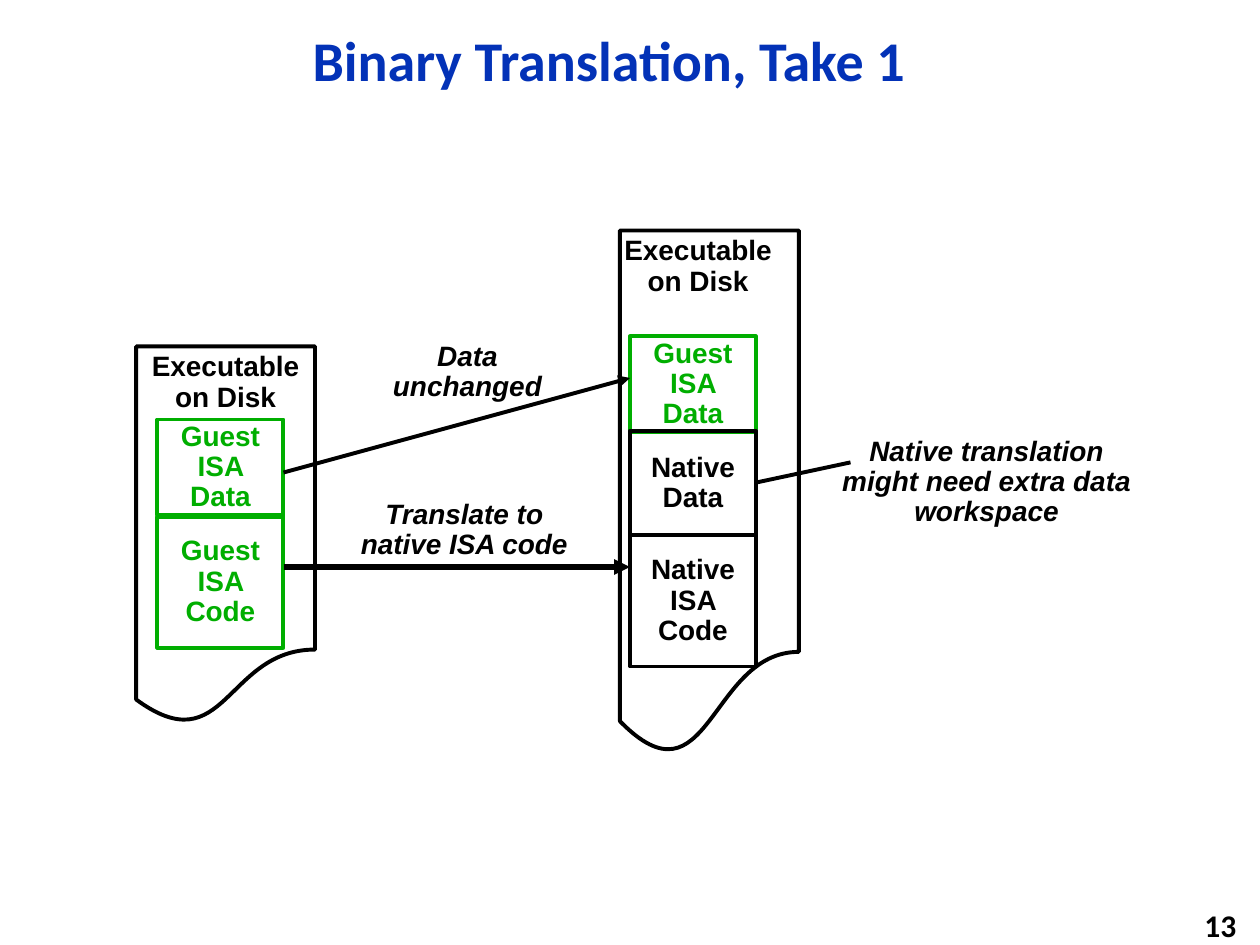
"""Build the slide 'Binary Translation, Take 1'."""
from lxml.etree import SubElement
from pptx import Presentation
from pptx.dml.color import RGBColor
from pptx.enum.shapes import MSO_CONNECTOR, MSO_SHAPE
from pptx.enum.text import MSO_ANCHOR, PP_ALIGN
from pptx.oxml.ns import qn
from pptx.util import Inches, Pt

BLUE = RGBColor(0x03, 0x32, 0xB7)
GREEN = RGBColor(0x00, 0xAE, 0x00)
BLACK = RGBColor(0x00, 0x00, 0x00)

DOCUMENTS = [(1.08, 2.75, 1.42, 3), (4.92, 1.83, 1.42, 4.17)]
SECTIONS = [
    ("Guest ISA Data", 1.25, 3.33, 0.76, GREEN),
    ("Guest ISA Code", 1.25, 4.1, 1.04, GREEN),
    ("Guest ISA Data", 5, 2.67, 0.76, GREEN),
    ("Native Data", 5, 3.42, 0.83, BLACK),
    ("Native ISA Code", 5, 4.25, 1.04, BLACK),
]
HEADINGS = [
    ("Executable on Disk", (1.08, 2.75, 1.42, 0.58)),
    ("Executable on Disk", (4.83, 1.83, 1.42, 0.58)),
]
NOTES = [
    ("Data unchanged", (2.92, 2.67, 1.58, 0.58)),
    ("Translate to native ISA code", (2.67, 3.92, 2.03, 0.58)),
    ("Native translation might need extra data workspace", (6.58, 3.42, 2.5, 0.82)),
]
LINES = [
    ((2.25, 3.75, 5, 3), 2.25, True),
    ((2.25, 4.5, 5, 4.5), 3, True),
    ((6, 3.83, 6.75, 3.67), 2.25, False),
]


def write(sp, text, size=16, font="Arial", color=BLACK, italic=False,
          align=PP_ALIGN.CENTER, anchor=MSO_ANCHOR.TOP, spacing=0.9):
    tf = sp.text_frame
    tf.word_wrap = True
    tf.vertical_anchor = anchor
    p = tf.paragraphs[0]
    p.alignment = align
    p.line_spacing = spacing
    r = p.add_run()
    r.text = text
    r.font.size = Pt(size)
    r.font.name = font
    r.font.bold = True
    r.font.italic = italic
    r.font.color.rgb = color


def add_text(s, text, box, **fmt):
    write(s.shapes.add_textbox(*map(Inches, box)), text, **fmt)


def add_outline(s, kind, box, color):
    sp = s.shapes.add_shape(kind, *map(Inches, box))
    sp.shadow.inherit = False
    sp.fill.background()
    sp.line.color.rgb = color
    sp.line.width = Pt(2.25)
    return sp


def add_line(s, ends, width, arrow):
    cn = s.shapes.add_connector(MSO_CONNECTOR.STRAIGHT, *map(Inches, ends))
    cn.line.color.rgb = BLACK
    cn.line.width = Pt(width)
    if arrow:
        SubElement(cn.line._get_or_add_ln(), qn("a:tailEnd"), type="triangle")
    SubElement(cn._element.spPr, qn("a:effectLst"))


def main():
    prs = Presentation()
    prs.slide_width, prs.slide_height = Inches(10), Inches(7.5)
    s = prs.slides.add_slide(prs.slide_layouts[6])

    add_text(s, "Binary Translation, Take 1", (0.92, 0, 7.83, 1), size=32,
             font="Calibri", color=BLUE, anchor=MSO_ANCHOR.MIDDLE)
    add_text(s, "13", (7.83, 7.18, 2.08, 0.32), size=18, font="Calibri",
             align=PP_ALIGN.RIGHT, anchor=MSO_ANCHOR.MIDDLE, spacing=1.0)

    for box in DOCUMENTS:
        add_outline(s, MSO_SHAPE.FLOWCHART_DOCUMENT, box, BLACK)
    for text, x, y, h, color in SECTIONS:
        sp = add_outline(s, MSO_SHAPE.RECTANGLE, (x, y, 1, h), color)
        write(sp, text, color=color, anchor=MSO_ANCHOR.MIDDLE)
    for text, box in HEADINGS:
        add_text(s, text, box)
    for text, box in NOTES:
        add_text(s, text, box, italic=True)
    for ends, width, arrow in LINES:
        add_line(s, ends, width, arrow)

    prs.save("out.pptx")


if __name__ == "__main__":
    main()
